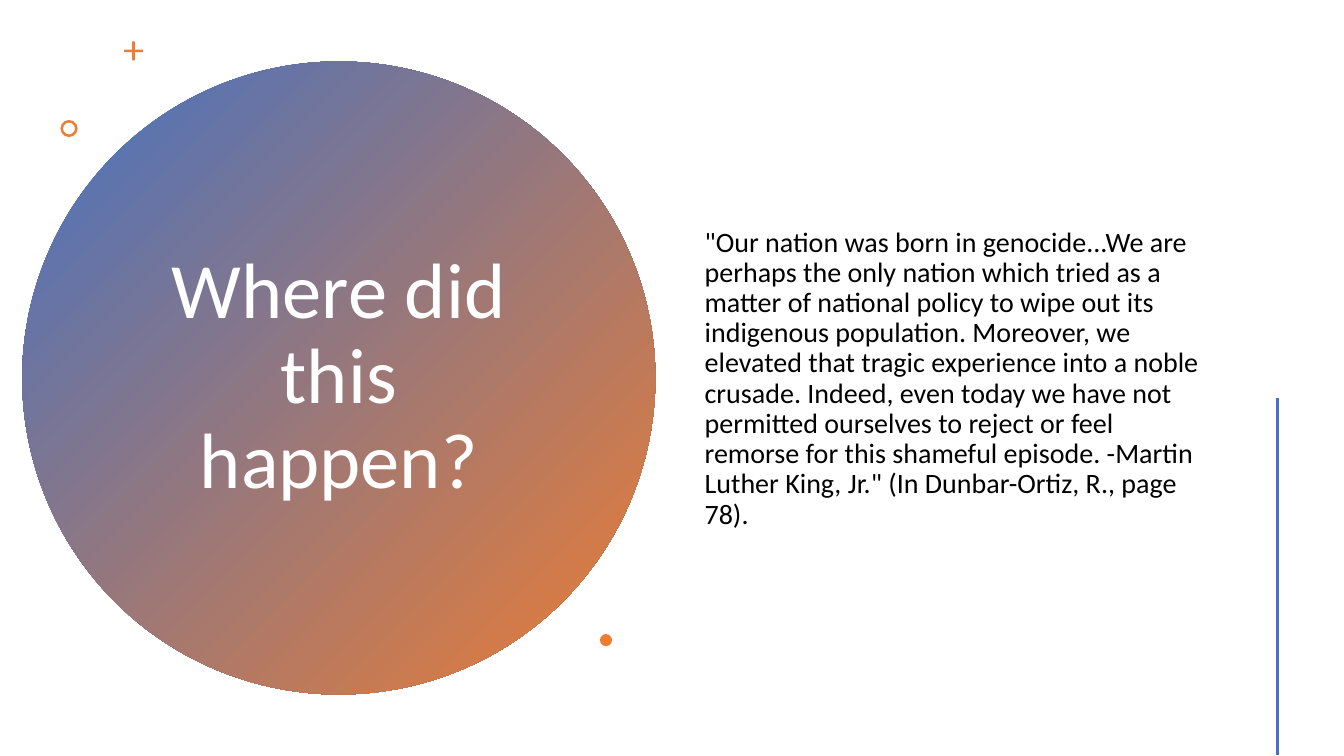
from dataclasses import dataclass

from lxml import etree
from pptx import Presentation
from pptx.dml.color import RGBColor
from pptx.enum.shapes import MSO_CONNECTOR, MSO_SHAPE
from pptx.enum.text import MSO_ANCHOR, MSO_AUTO_SIZE, PP_ALIGN
from pptx.oxml.ns import qn
from pptx.util import Inches, Pt

OVAL, CROSS, DONUT = MSO_SHAPE.OVAL, MSO_SHAPE.CROSS, MSO_SHAPE.DONUT
STRAIGHT = MSO_CONNECTOR.STRAIGHT
LEFT, CENTER = PP_ALIGN.LEFT, PP_ALIGN.CENTER
MIDDLE = MSO_ANCHOR.MIDDLE
NO_AUTOFIT = MSO_AUTO_SIZE.NONE
TITLE_ONLY = 5


@dataclass(frozen=True)
class Theme:
    """Colours, type and line weights of the slide."""
    blue: RGBColor = RGBColor(0x44, 0x72, 0xC4)
    orange: RGBColor = RGBColor(0xED, 0x7D, 0x31)
    white: RGBColor = RGBColor(0xFF, 0xFF, 0xFF)
    black: RGBColor = RGBColor(0x00, 0x00, 0x00)
    font: str = "Calibri"
    title_size: int = 56
    quote_size: int = 20
    line_spacing: float = 0.9
    rule_width: int = 2


THEME = Theme()
TITLE = "Where did this happen?"
QUOTE = (
    '"Our nation was born in genocide...We are perhaps the only nation which '
    "tried as a matter of national policy to wipe out its indigenous population. "
    "Moreover, we elevated that tragic experience into a noble crusade. Indeed, "
    "even today we have not permitted ourselves to reject or feel remorse for "
    'this shameful episode. -Martin Luther King, Jr." '
    "(In Dunbar-Ortiz, R., page 78)."
)


def write(holder, text, size, color, align):
    """Fill a text holder with one vertically centred paragraph."""
    frame = holder.text_frame
    frame.text = text
    frame.word_wrap = True
    frame.auto_size = NO_AUTOFIT
    frame.vertical_anchor = MIDDLE
    paragraph = frame.paragraphs[0]
    paragraph.alignment = align
    paragraph.line_spacing = THEME.line_spacing
    paragraph.space_before = Pt(0)
    font = paragraph.runs[0].font
    font.name, font.size, font.color.rgb = THEME.font, Pt(size), color


def add_round(slide, kind, left, top, size):
    """Add an unlined, shadowless shape in a square box."""
    shape = slide.shapes.add_shape(
        kind, Inches(left), Inches(top), Inches(size), Inches(size))
    shape.shadow.inherit = False
    shape.line.fill.background()
    return shape


def add_title_disc(slide, left, top, size):
    """Place the gradient disc with the title centred on it."""
    disc = add_round(slide, OVAL, left, top, size)
    disc.fill.gradient()
    disc.fill.gradient_angle = 315
    for stop, position, color in zip(
            disc.fill.gradient_stops, (0, 1), (THEME.blue, THEME.orange)):
        stop.position = position
        stop.color.rgb = color

    title = slide.shapes.title
    width, height = 3.99, 4.67
    title.left = Inches(left + (size - width) / 2)
    title.top = Inches(top + (size - height) / 2)
    title.width, title.height = Inches(width), Inches(height)
    write(title, TITLE, THEME.title_size, THEME.white, CENTER)
    disc.element.addnext(title.element)


def add_accents(slide, left, top, size):
    """Scatter the plus, ring and dot around the disc's box."""
    accents = (
        (CROSS, 1.01, -0.2, 0.19, 0.43),
        (DONUT, 0.38, 0.58, 0.17, 0.15),
        (OVAL, 5.73, 5.68, 0.12, None),
    )
    for kind, dx, dy, accent_size, thickness in accents:
        accent = add_round(slide, kind, left + dx, top + dy, accent_size)
        accent.fill.solid()
        accent.fill.fore_color.rgb = THEME.orange
        if thickness is not None:
            accent.adjustments[0] = thickness


def add_quote(slide, left, top, width, height):
    """Place the quotation in its box."""
    quote = slide.shapes.add_textbox(
        Inches(left), Inches(top), Inches(width), Inches(height))
    write(quote, QUOTE, THEME.quote_size, THEME.black, LEFT)


def add_side_rule(slide, left, top, height):
    """Draw the vertical rule at the right edge."""
    rule = slide.shapes.add_connector(
        STRAIGHT, Inches(left), Inches(top), Inches(left), Inches(top + height))
    rule.line.color.rgb = THEME.blue
    rule.line.width = Pt(THEME.rule_width)
    etree.SubElement(rule.element.spPr, qn("a:effectLst"))


def main():
    """Build and save the slide."""
    deck = Presentation()
    deck.slide_width, deck.slide_height = Inches(13.33), Inches(7.5)
    slide = deck.slides.add_slide(deck.slide_layouts[TITLE_ONLY])
    disc_box = (0.22, 0.61, 6.28)
    add_title_disc(slide, *disc_box)
    add_accents(slide, *disc_box)
    add_quote(slide, 6.89, 0.57, 5.22, 6.38)
    add_side_rule(slide, 12.67, 3.95, 3.54)
    deck.save("out.pptx")


if __name__ == "__main__":
    main()
